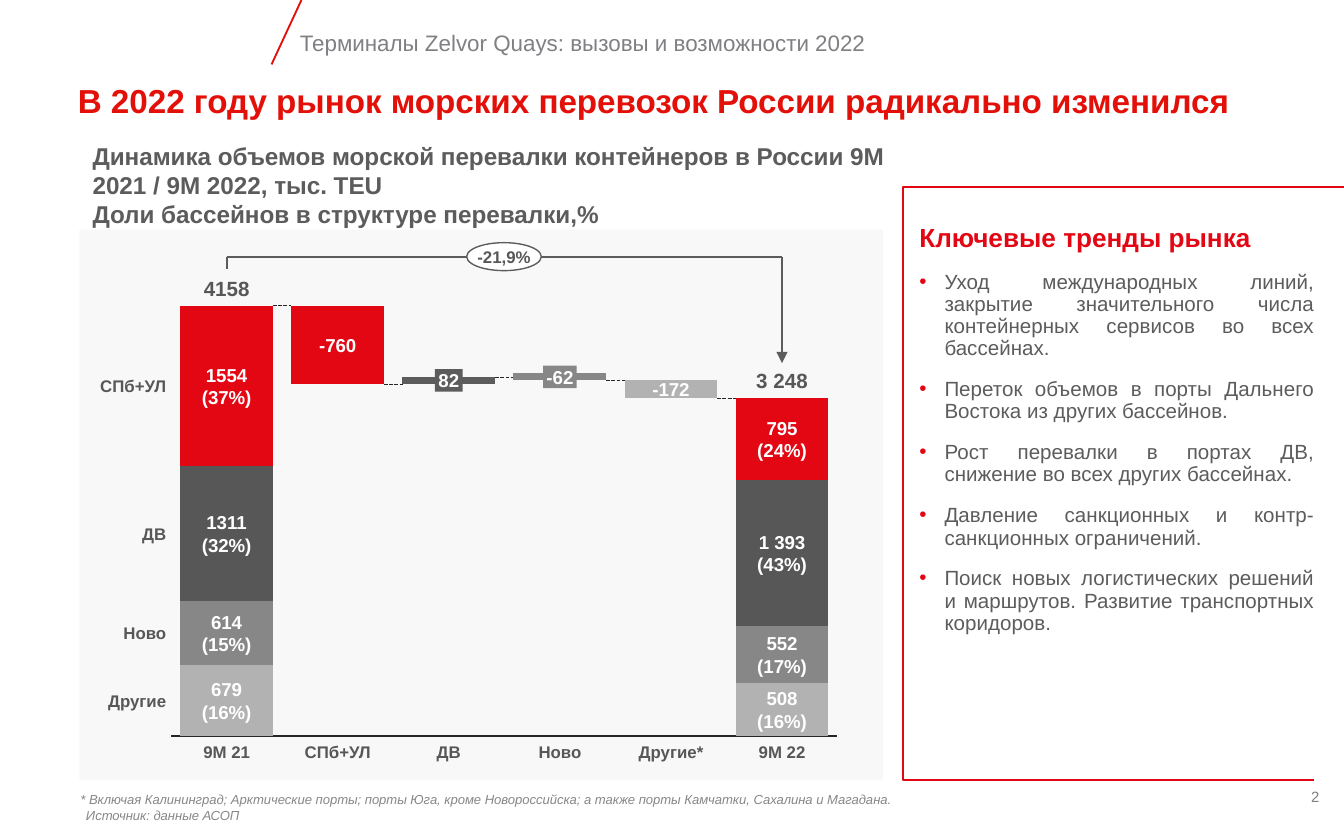
from lxml import etree
from pptx import Presentation
from pptx.chart.data import CategoryChartData
from pptx.dml.color import RGBColor
from pptx.enum.chart import XL_CHART_TYPE, XL_TICK_LABEL_POSITION, XL_TICK_MARK
from pptx.enum.dml import MSO_LINE
from pptx.enum.shapes import MSO_CONNECTOR, MSO_SHAPE
from pptx.enum.text import MSO_ANCHOR, MSO_AUTO_SIZE, PP_ALIGN
from pptx.oxml.ns import qn
from pptx.util import Pt

LEFT, CENTER, RIGHT, JUSTIFY = PP_ALIGN.LEFT, PP_ALIGN.CENTER, PP_ALIGN.RIGHT, PP_ALIGN.JUSTIFY
TOP, MIDDLE, BOTTOM = MSO_ANCHOR.TOP, MSO_ANCHOR.MIDDLE, MSO_ANCHOR.BOTTOM
STRAIGHT, RECTANGLE, OVAL = MSO_CONNECTOR.STRAIGHT, MSO_SHAPE.RECTANGLE, MSO_SHAPE.OVAL

HEADER = "Терминалы Zelvor Quays: вызовы и возможности 2022"
TITLE = "В 2022 году рынок морских перевозок России радикально изменился"
SUBTITLE = [
    "Динамика объемов морской перевалки контейнеров в России 9М 2021 / 9М 2022, тыс. TEU",
    "Доли бассейнов в структуре перевалки,%",
]
FOOTNOTE = ("* Включая Калининград; Арктические порты; порты Юга, кроме Новороссийска; "
            "а также порты Камчатки, Сахалина и Магадана.")
SOURCE = "Источник: данные АСОП"
TRENDS_HEADING = "Ключевые тренды рынка"
TRENDS = [
    "Уход международных линий, закрытие значительного числа контейнерных сервисов во всех бассейнах.",
    "Переток объемов в порты Дальнего Востока из других бассейнов.",
    "Рост перевалки в портах ДВ, снижение во всех других бассейнах.",
    "Давление санкционных и контр- санкционных ограничений.",
    "Поиск новых логистических решений и маршрутов. Развитие транспортных коридоров.",
]
COLUMNS = ["9M 21", "СПб+УЛ", "ДВ", "Ново", "Другие*", "9M 22"]
BASINS = ["Другие", "Ново", "ДВ", "СПб+УЛ"]
VALUES = [
    [20, 99, 99, 100, 95, 15],
    [18, 22, 2, 2, 5, 16],
    [38, None, None, None, None, 41],
    [45, None, None, None, None, 23],
]
SHARES = {
    0: [("679", "(16%)"), ("614", "(15%)"), ("1311", "(32%)"), ("1554", "(37%)")],
    5: [("508", "(16%)"), ("552", "(17%)"), ("1 393", "(43%)"), ("795", "(24%)")],
}
CHANGES = [(1, "-760", 24, None), (2, "82", 15, "slate"), (3, "-62", 18, "gray"), (4, "-172", 24, None)]
TOTALS = {0: "4158", 5: "3 248"}
LEVELS = [121, 99, 101, 100, 95]
TOTAL_CHANGE = "-21,9%"

THEME = {
    "font": "Arial",
    "colors": {"red": "E30613", "title": "E31009", "slate": "5C5C5C", "dark": "575757",
               "gray": "878787", "light": "B2B2B2", "mute": "807F83", "ink": "262626", "white": "FFFFFF"},
    "styles": {
        "header": (12, "mute", False, False), "number": (8, "mute", False, False),
        "title": (17.8, "title", True, False), "subtitle": (13, "slate", True, False),
        "note": (7, "gray", False, True), "axis": (9, "dark", True, False),
        "total": (11, "dark", True, False), "value": (10, "white", True, False),
        "heading": (14, "red", True, False), "trend": (11, "slate", False, False),
    },
}
SERIES_FILLS = [None, "gray", "dark", "red"]
POINT_FILLS = {0: {0: "light", 5: "light"}, 1: {1: "red", 2: "slate", 4: "light"}}

CHART = (85, 155.5, 370, 245.5)
PLOT = {"x": 0.018, "y": 0.026, "w": 0.965, "h": 0.947}
AXIS_MAX = 122
GAP_WIDTH = 20
PLOT_LEFT = CHART[0] + PLOT["x"] * CHART[2]
PITCH = PLOT["w"] * CHART[2] / len(COLUMNS)
BAR = PITCH / (1 + GAP_WIDTH / 100)
PLOT_HEIGHT = PLOT["h"] * CHART[3]
BASE = CHART[1] + PLOT["y"] * CHART[3] + PLOT_HEIGHT


def color(name):
    return RGBColor.from_string(THEME["colors"][name])


def center_x(column):
    return PLOT_LEFT + PITCH * (column + 0.5)


def level_y(value):
    return BASE - value / AXIS_MAX * PLOT_HEIGHT


def middle_y(column, layer):
    below = sum(row[column] for row in VALUES[:layer])
    return level_y(below + VALUES[layer][column] / 2)


def set_attributes(target, values):
    for key, value in values.items():
        setattr(target, key, value)


def paint(fill, name):
    if name is None:
        fill.background()
    else:
        fill.solid()
        fill.fore_color.rgb = color(name)


def write(box, lines, style, align=LEFT, anchor=TOP, insets=(7.2, 3.6, 7.2, 3.6), wrap=True, **spacing):
    frame = box.text_frame
    left, top, right, bottom = map(Pt, insets)
    set_attributes(frame, {"auto_size": MSO_AUTO_SIZE.NONE, "word_wrap": wrap, "vertical_anchor": anchor,
                           "margin_left": left, "margin_top": top,
                           "margin_right": right, "margin_bottom": bottom})
    for index, line in enumerate(lines):
        para = frame.paragraphs[0] if index == 0 else frame.add_paragraph()
        set_attributes(para, {"alignment": align, "space_before": Pt(0), **spacing})
        write_span(para, line, style)


def write_span(para, line, style):
    span = para.add_run()
    span.text = line
    size, ink, bold, italic = THEME["styles"][style]
    set_attributes(span.font, {"name": THEME["font"], "size": Pt(size), "bold": bold, "italic": italic})
    span.font.color.rgb = color(ink)


def add_text(page, area, lines, style, **options):
    box = page.shapes.add_textbox(*map(Pt, area))
    write(box, lines, style, **options)
    return box


def add_label(page, x, y, width, height, lines, style, fill=None, anchor=MIDDLE):
    box = add_text(page, (x - width / 2, y - height / 2, width, height), lines, style,
                   align=CENTER, anchor=anchor, insets=(0, 0, 0, 0))
    paint(box.fill, fill)


def add_shape(page, kind, area, fill, outline=None):
    shape = page.shapes.add_shape(kind, *map(Pt, area))
    shape.shadow.inherit = False
    paint(shape.fill, fill)
    paint(shape.line.fill, outline)
    return shape


def add_line(page, start, end, ink, width, dash=None, arrow=False):
    line = page.shapes.add_connector(STRAIGHT, *map(Pt, start + end))
    paint(line.line.fill, ink)
    set_attributes(line.line, {"width": Pt(width), "dash_style": dash})
    if arrow:
        etree.SubElement(line.line._get_or_add_ln(), qn("a:tailEnd"), type="triangle")
    etree.SubElement(line._element.spPr, qn("a:effectLst"))


def add_bullet(para):
    props = para._p.get_or_add_pPr()
    props.set("marL", str(Pt(13.5)))
    props.set("indent", str(-Pt(13.5)))
    tint = etree.SubElement(props, qn("a:buClr"))
    etree.SubElement(tint, qn("a:srgbClr"), val=THEME["colors"]["red"])
    etree.SubElement(props, qn("a:buChar"), char="•")


def add_basin_chart(page):
    data = CategoryChartData()
    data.categories = COLUMNS
    for basin, row in zip(BASINS, VALUES):
        data.add_series(basin, row)
    chart = page.shapes.add_chart(XL_CHART_TYPE.COLUMN_STACKED, *map(Pt, CHART), data).chart
    set_attributes(chart, {"has_legend": False, "has_title": False})
    set_attributes(chart.font, {"name": "Calibri", "size": Pt(10)})
    chart.font.color.rgb = color("ink")
    set_attributes(chart.plots[0], {"gap_width": GAP_WIDTH, "overlap": 100, "vary_by_categories": False})
    set_attributes(chart.value_axis, {"visible": False, "has_major_gridlines": False,
                                      "minimum_scale": 0, "maximum_scale": AXIS_MAX})
    axis = chart.category_axis
    set_attributes(axis, {"tick_label_position": XL_TICK_LABEL_POSITION.NONE,
                          "major_tick_mark": XL_TICK_MARK.NONE})
    paint(axis.format.line.fill, "ink")
    axis.format.line.width = Pt(0.75)
    for index, series in enumerate(chart.plots[0].series):
        paint(series.format.fill, SERIES_FILLS[index])
        for column, fill in POINT_FILLS.get(index, {}).items():
            paint(series.points[column].format.fill, fill)
    area = chart._chartSpace.find(".//" + qn("c:plotArea"))
    for old in area.findall(qn("c:layout")):
        area.remove(old)
    layout = etree.Element(qn("c:layout"))
    area.insert(0, layout)
    manual = etree.SubElement(layout, qn("c:manualLayout"))
    settings = {"layoutTarget": "inner", "xMode": "edge", "yMode": "edge", **PLOT}
    for key, value in settings.items():
        etree.SubElement(manual, qn("c:" + key), val=str(value))


def add_waterfall(page):
    for column, level in enumerate(LEVELS):
        start = center_x(column) + BAR / 2
        add_line(page, (start, level_y(level)), (start + PITCH - BAR, level_y(level)),
                 "ink", 0.25, MSO_LINE.LONG_DASH)
    add_basin_chart(page)
    first, last, top = center_x(0), center_x(5), 137.5
    add_line(page, (last, top), (last, 194.5), "slate", 1, arrow=True)
    add_line(page, (first, 144), (first, top), "slate", 1)
    add_line(page, (first, top), (last, top), "slate", 1)
    for column, labels in SHARES.items():
        for layer, lines in enumerate(labels):
            add_label(page, center_x(column), middle_y(column, layer), 30, 24, lines, "value")
    for column, label, width, fill in CHANGES:
        add_label(page, center_x(column), middle_y(column, 1), width, 12, [label], "value", fill)
    for column, label in TOTALS.items():
        peak = level_y(sum(row[column] for row in VALUES))
        add_label(page, center_x(column), peak - 9.5, 32, 13, [label], "total", anchor=BOTTOM)
    for column, label in enumerate(COLUMNS):
        add_label(page, center_x(column), 403, 40, 11, [label], "axis", anchor=TOP)
    for layer, basin in enumerate(BASINS):
        add_text(page, (49, middle_y(0, layer) - 5.5, 40, 11), [basin], "axis",
                 align=RIGHT, anchor=MIDDLE, insets=(0, 0, 0, 0))
    badge = add_shape(page, OVAL, (250, 130, 40, 15), "white", "slate")
    badge.line.width = Pt(0.75)
    write(badge, [TOTAL_CHANGE], "axis", align=CENTER, anchor=MIDDLE, insets=(0, 0, 0, 0), wrap=False)


def add_trends(page, body):
    outline = page.shapes.build_freeform(Pt(720), Pt(100), scale=1.0)
    outline.add_line_segments([(Pt(484), Pt(100)), (Pt(484), Pt(418)), (Pt(704), Pt(418))], close=False)
    frame = outline.convert_to_shape()
    frame.shadow.inherit = False
    paint(frame.fill, None)
    paint(frame.line.fill, "red")
    frame.line.width = Pt(1)
    spacing = {"line_spacing": 0.9, "space_after": Pt(10)}
    write(body, [TRENDS_HEADING], "heading", align=JUSTIFY, insets=(0, 14.4, 14.4, 14.4), **spacing)
    props = body.text_frame.paragraphs[0]._p.get_or_add_pPr()
    props.set("marL", "0")
    props.set("indent", "0")
    etree.SubElement(props, qn("a:buNone"))
    for trend in TRENDS:
        para = body.text_frame.add_paragraph()
        add_bullet(para)
        set_attributes(para, {"alignment": JUSTIFY, "space_before": Pt(0), **spacing})
        write_span(para, trend, "trend")


def place(shape, area):
    set_attributes(shape, dict(zip(("left", "top", "width", "height"), map(Pt, area))))


def main():
    deck = Presentation()
    set_attributes(deck, {"slide_width": Pt(720), "slide_height": Pt(450)})
    page = deck.slides.add_slide(deck.slide_layouts[1])
    title, body = page.placeholders
    place(title, (34.5, 42, 684, 26.5))
    place(body, (492.5, 106, 226, 306))
    write(title, [TITLE], "title", line_spacing=0.9)
    add_line(page, (161.5, 0), (145.5, 34.5), "title", 1)
    add_text(page, (153.5, 12, 430.5, 22), [HEADER], "header")
    add_text(page, (686, 418.5, 28, 17), ["2"], "number", align=RIGHT)
    panel = add_shape(page, RECTANGLE, (42.5, 123, 430.5, 295), "mute")
    tint = panel._element.spPr.find(".//" + qn("a:srgbClr"))
    etree.SubElement(tint, qn("a:alpha"), val="5000")
    add_text(page, (39, 429, 412, 16), [SOURCE], "note")
    add_text(page, (36, 420.5, 456.5, 16), [FOOTNOTE], "note")
    add_waterfall(page)
    add_text(page, (42.5, 72, 439, 55), SUBTITLE, "subtitle")
    add_trends(page, body)
    deck.save("out.pptx")


if __name__ == "__main__":
    main()
